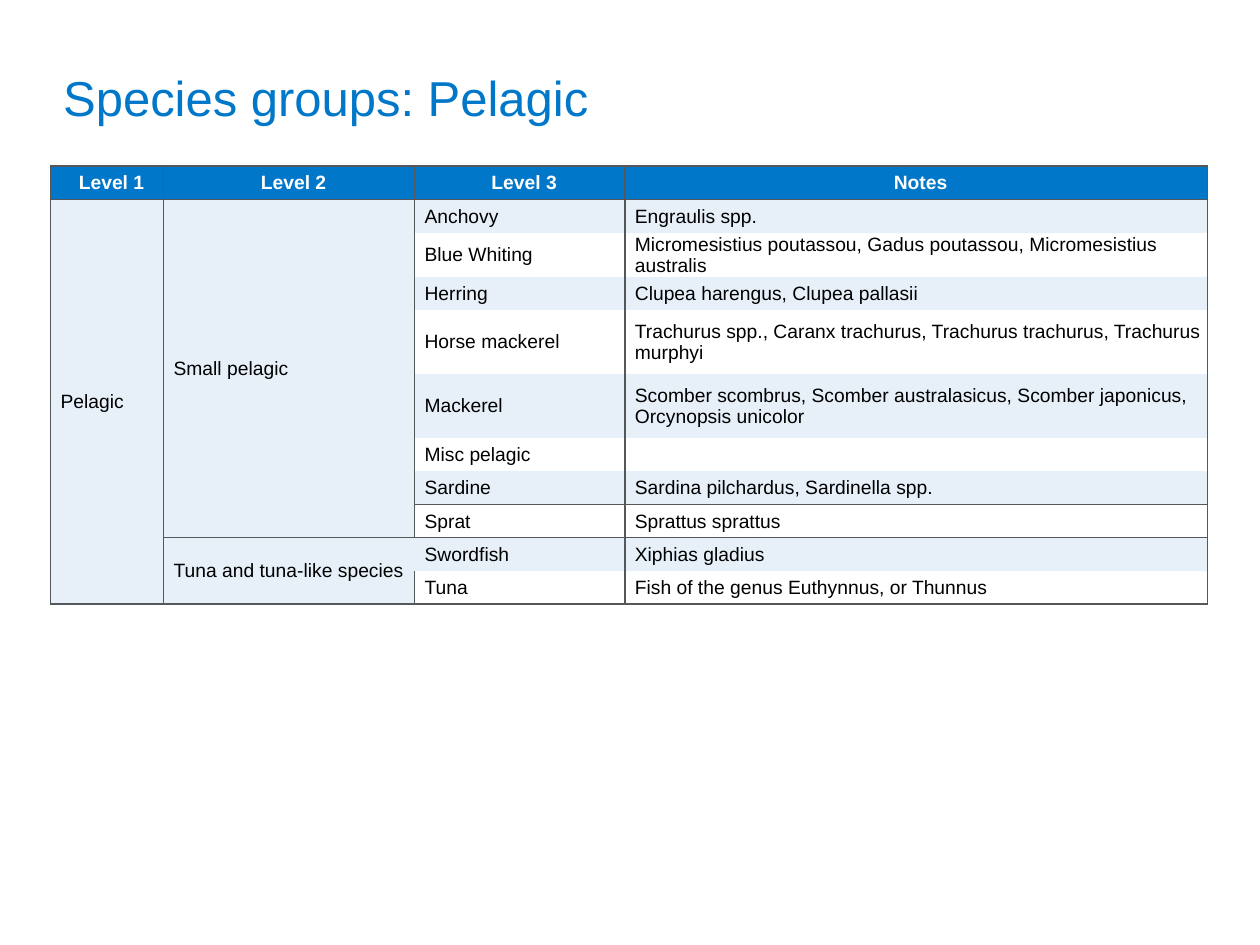
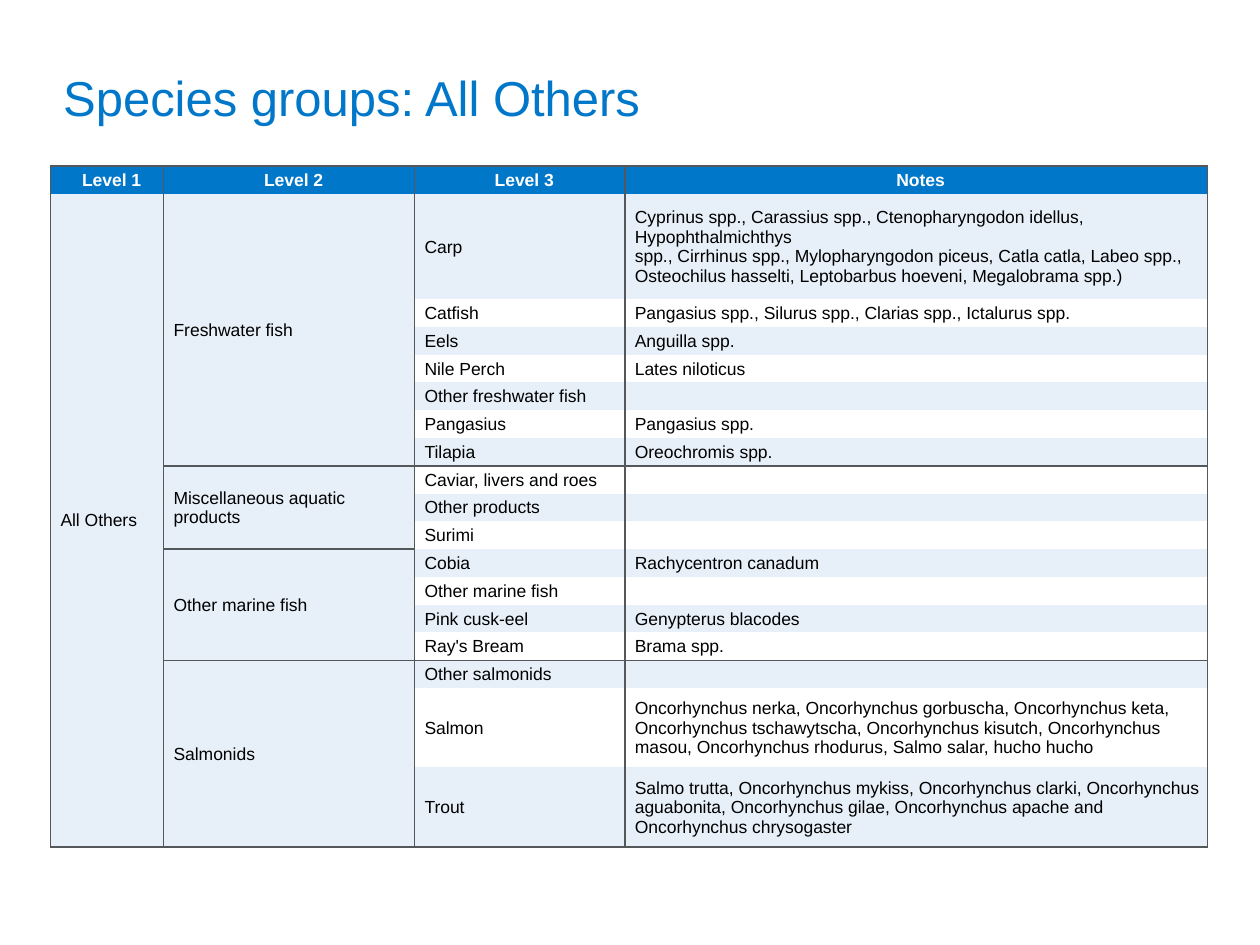
from lxml import etree
from pptx import Presentation
from pptx.dml.color import RGBColor
from pptx.enum.text import MSO_ANCHOR, PP_ALIGN
from pptx.oxml.ns import qn
from pptx.util import Cm, Pt

MIDDLE = MSO_ANCHOR.MIDDLE
LEFT, CENTER = PP_ALIGN.LEFT, PP_ALIGN.CENTER

FONT = "Arial"
COLORS = {"blue": "0077C8", "rule": "54585A", "tint": "E7F0F9",
          "white": "FFFFFF", "black": "000000"}
TITLE_BOX = (1.02, 0.76, 23.29, 2.39)
TABLE_BOX = (1.02, 3.35, 23.32)
COLUMN_WIDTHS = (2.28, 5.06, 4.24, 11.74)
HEADINGS = ("Level 1", "Level 2", "Level 3", "Notes")
SIDES = "LRTB"
TITLE_ONLY = 5

# Level 2 groups, each with its level 3 species and notes
PELAGIC = {
    "Small pelagic": [
        ("Anchovy", "Engraulis spp."),
        ("Blue Whiting", "Micromesistius poutassou, Gadus poutassou, "
                         "Micromesistius australis"),
        ("Herring", "Clupea harengus, Clupea pallasii"),
        ("Horse mackerel", "Trachurus spp., Caranx trachurus, "
                           "Trachurus trachurus, Trachurus murphyi"),
        ("Mackerel", "Scomber scombrus, Scomber australasicus, "
                     "Scomber japonicus, Orcynopsis unicolor"),
        ("Misc pelagic", ""),
        ("Sardine", "Sardina pilchardus, Sardinella spp."),
        ("Sprat", "Sprattus sprattus"),
    ],
    "Tuna and tuna-like species": [
        ("Swordfish", "Xiphias gladius"),
        ("Tuna", "Fish of the genus Euthynnus, or Thunnus"),
    ],
}
ALL_OTHERS = {
    "Freshwater fish": [
        ("Carp", "Cyprinus spp., Carassius spp., Ctenopharyngodon idellus, "
                 "Hypophthalmichthys\vspp., Cirrhinus spp., "
                 "Mylopharyngodon piceus, Catla catla, Labeo spp., "
                 "Osteochilus hasselti, Leptobarbus hoeveni, "
                 "Megalobrama spp.)"),
        ("Catfish", "Pangasius spp., Silurus spp., Clarias spp., "
                    "Ictalurus spp."),
        ("Eels", "Anguilla spp."),
        ("Nile Perch", "Lates niloticus"),
        ("Other freshwater fish", ""),
        ("Pangasius", "Pangasius spp."),
        ("Tilapia", "Oreochromis spp."),
    ],
    "Miscellaneous aquatic products": [
        ("Caviar, livers and roes", ""),
        ("Other products", ""),
        ("Surimi", ""),
    ],
    "Other marine fish": [
        ("Cobia", "Rachycentron canadum"),
        ("Other marine fish", ""),
        ("Pink cusk-eel", "Genypterus blacodes"),
        ("Ray's Bream", "Brama spp."),
    ],
    "Salmonids": [
        ("Other salmonids", ""),
        ("Salmon", "Oncorhynchus nerka, Oncorhynchus gorbuscha, "
                   "Oncorhynchus keta, Oncorhynchus tschawytscha, "
                   "Oncorhynchus kisutch, Oncorhynchus masou, "
                   "Oncorhynchus rhodurus, Salmo salar, hucho hucho"),
        ("Trout", "Salmo trutta, Oncorhynchus mykiss, Oncorhynchus clarki, "
                  "Oncorhynchus aguabonita, Oncorhynchus gilae, "
                  "Oncorhynchus apache and Oncorhynchus chrysogaster"),
    ],
}


def rgb(name):
    return RGBColor.from_string(COLORS[name])


def set_font(paragraph, size, color, bold=False):
    font = paragraph.font
    font.name, font.size, font.bold = FONT, Pt(size), bold
    font.color.rgb = rgb(color)


def set_borders(cell, drawn):
    """Draw the sides named in drawn and clear the others."""
    properties = cell._tc.get_or_add_tcPr()
    for side in SIDES:
        line = etree.SubElement(properties, qn(f"a:ln{side}"), w=str(Pt(1)))
        if side in drawn:
            fill = etree.SubElement(line, qn("a:solidFill"))
            etree.SubElement(fill, qn("a:srgbClr"), val=COLORS["rule"])
        else:
            etree.SubElement(line, qn("a:noFill"))


def fill_cell(cell, text, size, fill, drawn, heading=False):
    set_borders(cell, drawn)
    cell.fill.solid()
    cell.fill.fore_color.rgb = rgb(fill)
    cell.vertical_anchor = MIDDLE
    cell.margin_left = Cm(0.2)
    cell.margin_top = cell.margin_right = Cm(0.02)
    cell.margin_bottom = 0
    paragraph = cell.text_frame.paragraphs[0]
    paragraph.text = text
    paragraph.alignment = CENTER if heading else LEFT
    set_font(paragraph, size, "white" if heading else "black", heading)
    # Line breaks and empty cells need their own text size
    for line_break in paragraph._p.findall(qn("a:br")):
        etree.SubElement(line_break, qn("a:rPr"), sz=str(size * 100))
    if not text:
        etree.SubElement(paragraph._p, qn("a:endParaRPr"), sz=str(size * 100))


def add_title(slide, text, box):
    title = slide.shapes.title
    title.left, title.top, title.width, title.height = map(Cm, box)
    frame = title.text_frame
    frame.text = text
    frame.vertical_anchor = MIDDLE
    frame.paragraphs[0].alignment = LEFT
    set_font(frame.paragraphs[0], 28, "blue")


def add_species_table(slide, box, level_1, groups, size, row_height,
                      tall_rows, ruled_below, header_rule=False,
                      open_left=None):
    """Lay out a species hierarchy; ruled_below names the level 3 rows
    with a line under them, open_left the one without a line before it."""
    species = [entry for group in groups.values() for entry in group]
    names = ["", *(name for name, _ in species)]
    heights = [tall_rows.get(name, row_height) for name in names]
    last = len(species)
    left, top, width = box
    table = slide.shapes.add_table(
        last + 1, len(HEADINGS), Cm(left), Cm(top), Cm(width),
        Cm(sum(heights))).table
    table.horz_banding = False
    for column, column_width in zip(table.columns, COLUMN_WIDTHS):
        column.width = Cm(column_width)
    for row, height in zip(table.rows, heights):
        row.height = Cm(height)

    # First and last row of each level 2 group
    spans, start = {}, 1
    for group, members in groups.items():
        spans[start] = (group, start + len(members) - 1)
        start += len(members)

    # Rows with a line below, for each column
    header = {0} if header_rule else set()
    detail_rules = header | {names.index(name) for name in ruled_below}
    rules = (header | {last},
             header | {end for _, end in spans.values()},
             detail_rules, detail_rules)
    open_row = names.index(open_left) if open_left else None

    def borders(row, col):
        drawn = set("LR")
        if row == open_row:
            drawn -= {1: {"R"}, 2: {"L"}}.get(col, set())
        if row == 0 or row - 1 in rules[col]:
            drawn.add("T")
        merge_start = (col == 0 and row == 1) or (col == 1 and row in spans)
        if row in rules[col] or merge_start:
            drawn.add("B")
        return drawn

    # Heading row
    for col, heading in enumerate(HEADINGS):
        fill_cell(table.cell(0, col), heading, size, "blue",
                  borders(0, col), heading=True)

    # Species rows, banded in the two detail columns
    for row, (name, notes) in enumerate(species, start=1):
        band = "tint" if row % 2 else "white"
        texts = (level_1 if row == 1 else "", spans.get(row, ("",))[0],
                 name, notes)
        for col, text in enumerate(texts):
            fill_cell(table.cell(row, col), text, size,
                      "tint" if col < 2 else band, borders(row, col))

    # Merged hierarchy cells
    table.cell(1, 0).merge(table.cell(last, 0))
    for first, (_, end) in spans.items():
        table.cell(first, 1).merge(table.cell(end, 1))


def add_species_slide(prs, level_1, groups, **table_options):
    slide = prs.slides.add_slide(prs.slide_layouts[TITLE_ONLY])
    add_title(slide, f"Species groups: {level_1}", TITLE_BOX)
    add_species_table(slide, TABLE_BOX, level_1, groups, **table_options)


def main():
    prs = Presentation()
    prs.slide_width, prs.slide_height = Cm(25.4), Cm(19.05)
    add_species_slide(
        prs, "Pelagic", PELAGIC, size=11, row_height=0.67,
        tall_rows={"Horse mackerel": 1.29, "Mackerel": 1.29},
        ruled_below=("Sardine", "Sprat", "Tuna"),
        header_rule=True, open_left="Swordfish")
    add_species_slide(
        prs, "All Others", ALL_OTHERS, size=10, row_height=0.56,
        tall_rows={"Carp": 2.12, "Salmon": 1.6, "Trout": 1.6},
        ruled_below=("Tilapia", "Ray's Bream", "Trout"))
    prs.save("out.pptx")


if __name__ == "__main__":
    main()
